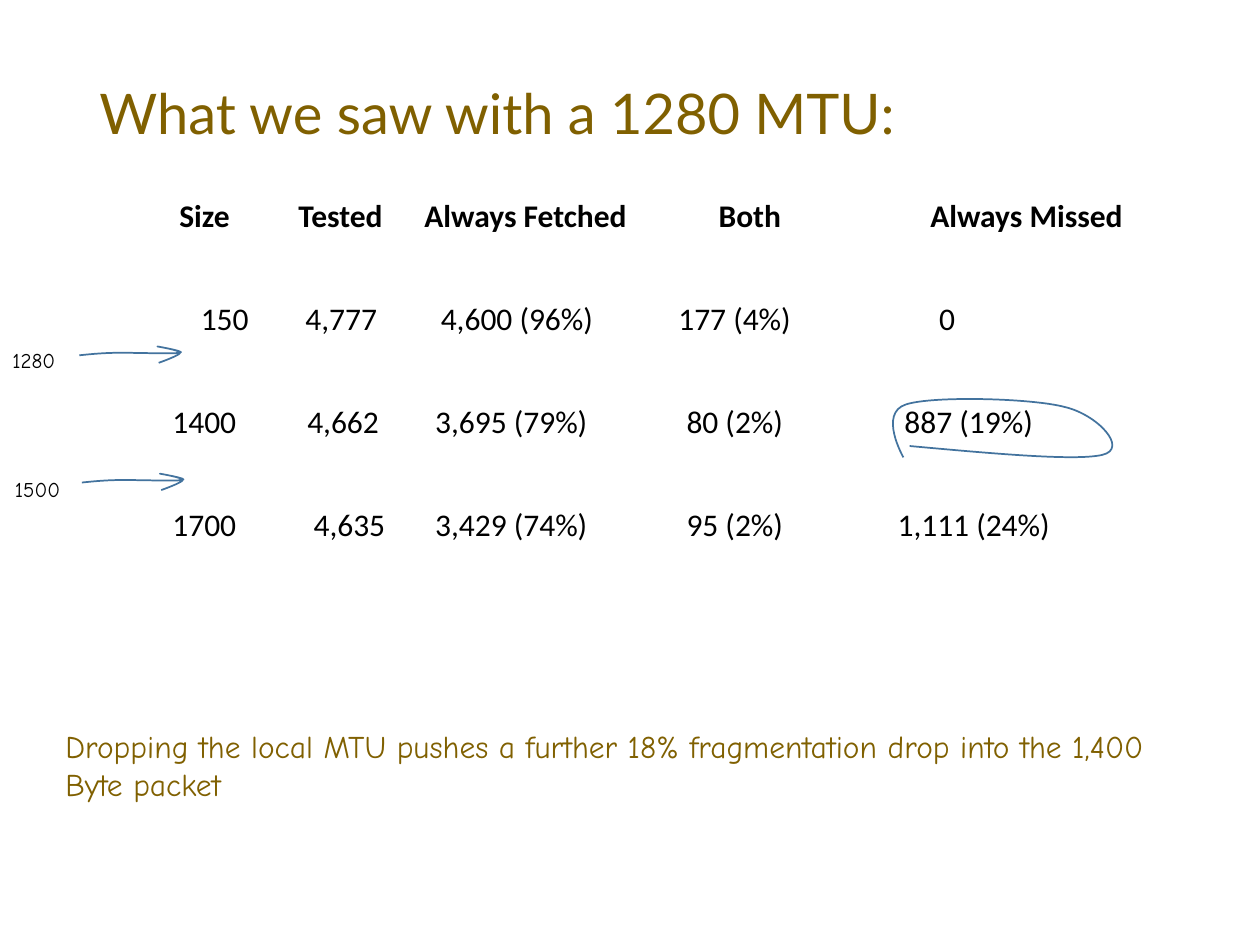
from lxml import etree
from pptx import Presentation
from pptx.dml.color import RGBColor
from pptx.enum.text import MSO_ANCHOR, MSO_AUTO_SIZE
from pptx.oxml.ns import qn
from pptx.util import Inches, Pt

TOP, MIDDLE = MSO_ANCHOR.TOP, MSO_ANCHOR.MIDDLE
FIT = MSO_AUTO_SIZE.SHAPE_TO_FIT_TEXT
GOLD = RGBColor(0x80, 0x60, 0x00)
BLACK = RGBColor(0, 0, 0)
BLUE = RGBColor(0x43, 0x73, 0x9E)
COLS, ROWS = 100, 75
UNIT = Inches(0.1)

TABLE = [
    (("Size", "Tested", "Always Fetched", "Both", "Always Missed"),
     (0.55, 10, 20, 43.35, 60.15)),
    (("150", "4,777", "4,600 (96%)", "177 (4%)", "0"),
     (2.25, 10.55, 21.3, 40.15, 60.85)),
    (("1400", "4,662", "3,695 (79%)", "80 (2%)", "887 (19%)"),
     (0, 10.7, 20.85, 40.8, 58.1)),
    (("1700", "4,635", "3,429 (74%)", "95 (2%)", "1,111 (24%)"),
     (0, 11.2, 20.85, 40.8, 57.55)),
]
ARROW = [(0, 0.7), (1, 0.6), (2, 0.5), (3.3, 0.5), (4.6, 0.5), (7.5, 0.6),
         (8, 0.5), (8.5, 0.4), (6.2, 0), (6.2, 0), (6.2, 0),
         (8, 0.3), (8, 0.5), (8, 0.7), (6.3, 1.3), (6.3, 1.3)]
LOOP = [(1.3, 3.7), (7.9, 4.3), (14.5, 4.9), (16.6, 4.4), (18.7, 3.9),
        (16.2, 1.2), (13.6, 0.6), (11, -0.1), (3.1, -0.3), (1, 0.4),
        (-1.2, 1.1), (0.8, 4.6), (0.8, 4.6)]


def grid(*cells):
    return [round(cell * UNIT) for cell in cells]


def add_box(slide, place, anchor=TOP, wrap=True):
    frame = slide.shapes.add_textbox(*grid(*place)).text_frame
    frame.word_wrap = wrap
    frame.vertical_anchor = anchor
    return frame


def style(para, face, size, color, bold=False):
    font = para.font
    font.name, font.size, font.bold = face, Pt(size), bold
    font.color.rgb = color


def add_text(slide, place, text, face, size, color, wrap=True):
    frame = add_box(slide, place, wrap=wrap)
    frame.auto_size = FIT
    para = frame.paragraphs[0]
    para.text = text
    style(para, face, size, color)


def add_title(slide, place, text):
    para = add_box(slide, place, MIDDLE).paragraphs[0]
    para.text = text
    para.line_spacing = 0.9
    style(para, "Lato", 32, GOLD)


def set_tabs(para, stops):
    props = para._p.get_or_add_pPr()
    tabs = etree.Element(qn("a:tabLst"))
    for stop in grid(*stops):
        etree.SubElement(tabs, qn("a:tab"), pos=str(stop), algn="l")
    props.find(qn("a:defRPr")).addprevious(tabs)


def add_rows(slide, place):
    frame = add_box(slide, place)
    for index, (cells, stops) in enumerate(TABLE):
        para = frame.add_paragraph() if index else frame.paragraphs[0]
        lead = "\t" if stops[0] else ""
        para.text = lead + "\t".join(cells)
        para.line_spacing = 0.9
        para.space_before = Pt(39.5 if index else 0)
        style(para, "Calibri", 18, BLACK, bold=index == 0)
        set_tabs(para, [stop for stop in stops if stop])


def add_step(track, kind, knots):
    step = etree.SubElement(track, qn(kind))
    for knot in knots:
        x, y = grid(*knot)
        etree.SubElement(step, qn("a:pt"), x=str(x), y=str(y))


def add_curve(slide, place, knots):
    left, top, width, height = grid(*place)
    pen = slide.shapes.build_freeform(left, top)
    pen.add_line_segments([(left + width, top + height)], close=False)
    curve = pen.convert_to_shape()
    track = curve._element.find(".//" + qn("a:path"))
    for step in list(track):
        track.remove(step)
    add_step(track, "a:moveTo", knots[:1])
    for start in range(1, len(knots), 3):
        add_step(track, "a:cubicBezTo", knots[start:start + 3])
    curve.shadow.inherit = False
    curve.fill.background()
    curve.line.color.rgb = BLUE
    curve.line.width = Pt(1)


def add_mark(slide, text, left, top, row):
    add_text(slide, (left, top, 6.2, 3), text, "Comic Neue", 12, BLACK,
             wrap=False)
    add_curve(slide, (left + 6.3, row, 8, 1.25), ARROW)


def main():
    deck = Presentation()
    deck.slide_width, deck.slide_height = grid(COLS, ROWS)
    slide = deck.slides.add_slide(deck.slide_layouts[6])
    add_title(slide, (6.9, 2, 86.2, 14.5), "What we saw with a 1280 MTU:")
    add_rows(slide, (12.7, 15.4, 80.5, 47.6))
    add_mark(slide, "1280", 0, 27.1, 27.5)
    add_mark(slide, "1500", 0.2, 37.3, 37.6)
    add_text(slide, (4.2, 57.2, 89.4, 7.1),
             "Dropping the local MTU pushes a further 18% fragmentation "
             "drop into the 1,400 Byte packet", "Comic Neue", 18, GOLD)
    add_curve(slide, (70.9, 31.7, 17.4, 4.65), LOOP)
    deck.save("out.pptx")


if __name__ == "__main__":
    main()
